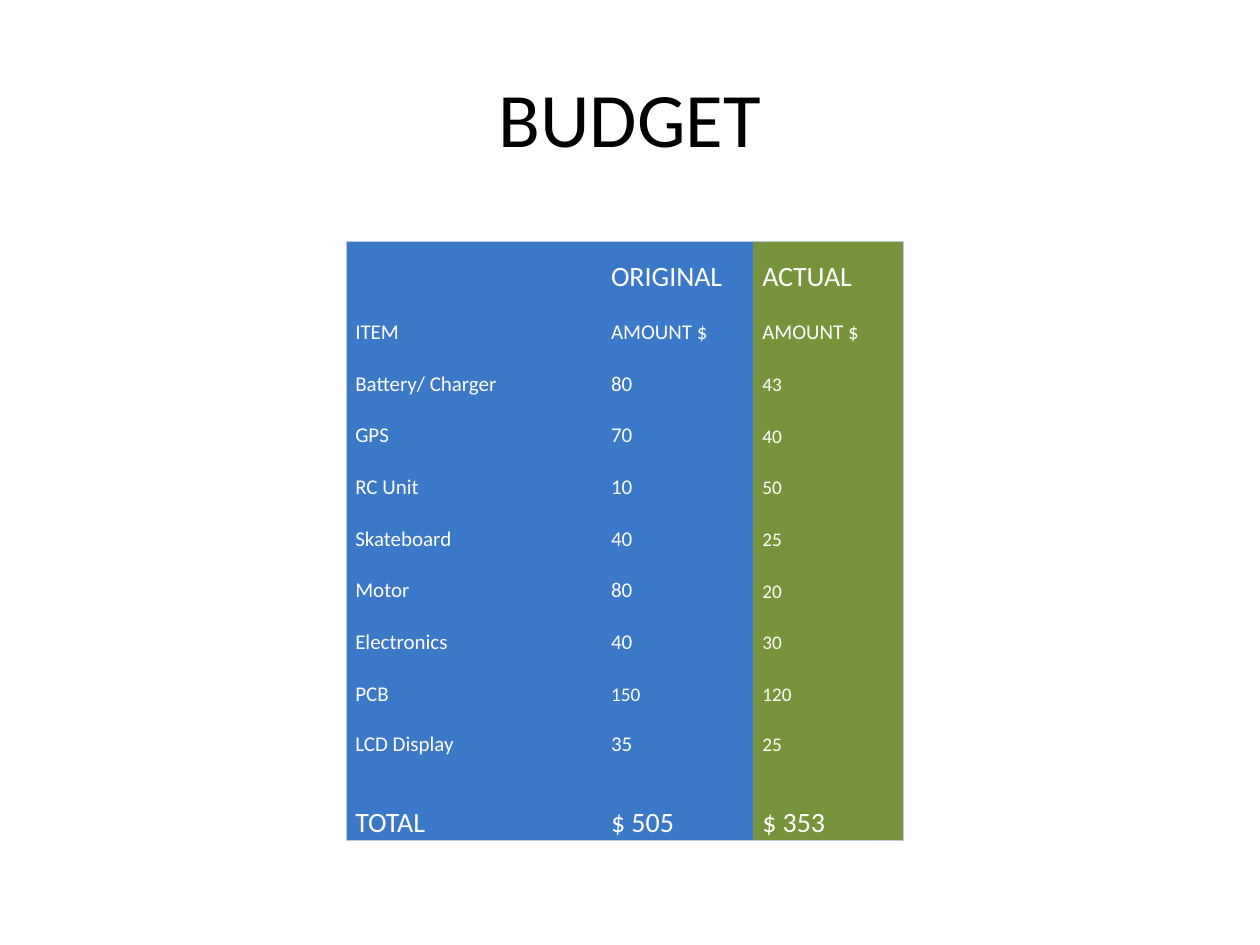
from lxml.etree import SubElement
from pptx import Presentation
from pptx.dml.color import RGBColor
from pptx.enum.text import MSO_ANCHOR as ANCHOR, PP_ALIGN as ALIGN
from pptx.oxml.ns import qn
from pptx.util import Inches, Pt

BLUE, GREEN, EDGE, WHITE, BLACK = "3C78C8", "77933C", "BDC8DD", "FFFFFF", "000000"
NO_STYLE = "{2D5ABB26-0587-4C30-8999-92F81FD0307C}"
COLUMNS = [2.03, 1.2, 1.19]
ROWS = [0.41] * 9 + [0.4, 0.66]
BUDGET = [
    ("", "ORIGINAL", "ACTUAL"),
    ("ITEM", "AMOUNT $", "AMOUNT $"),
    ("Battery/ Charger", "80", "43"),
    ("GPS", "70", "40"),
    ("RC Unit", "10", "50"),
    ("Skateboard", "40", "25"),
    ("Motor", "80", "20"),
    ("Electronics", "40", "30"),
    ("PCB", "150", "120"),
    ("LCD Display", "35", "25"),
    ("TOTAL", "$ 505", "$ 353"),
]


def rgb(value):
    return RGBColor.from_string(value)


def set_text(tf, text, size, color, align, spacing=1.0):
    p = tf.paragraphs[0]
    p.alignment, p.line_spacing = align, spacing
    r = p.add_run()
    r.text = text
    for name, value in {"name": "Calibri", "size": Pt(size)}.items():
        setattr(r.font, name, value)
    r.font.color.rgb = rgb(color)


def add_title(slide, box, text):
    tf = slide.shapes.add_textbox(*map(Inches, box)).text_frame
    tf.word_wrap, tf.vertical_anchor = True, ANCHOR.MIDDLE
    set_text(tf, text, 44, BLACK, ALIGN.CENTER)


def add_border(cell, side):
    ln = SubElement(cell._tc.get_or_add_tcPr(), qn(f"a:ln{side}"), w=str(Pt(0.75)))
    fill = SubElement(ln, qn("a:solidFill"))
    SubElement(fill, qn("a:srgbClr"), val=EDGE)


def text_size(row, col, text):
    if row in (0, len(ROWS) - 1):
        return 16
    is_small = row > 1 and (col == 2 or text == "150")
    return 11 if is_small else 12


def fill_cell(cell, row, col, text):
    last_row, last_col = len(ROWS) - 1, len(COLUMNS) - 1
    outer = {"L": col == 0, "R": col == last_col, "T": row == 0, "B": row == last_row}
    for side, is_outer in outer.items():
        if is_outer:
            add_border(cell, side)
    cell.fill.solid()
    cell.fill.fore_color.rgb = rgb(GREEN if col == last_col else BLUE)
    layout = {"margin_left": Inches(0.07), "margin_right": Inches(0.07),
              "margin_top": 0, "margin_bottom": 0, "vertical_anchor": ANCHOR.BOTTOM}
    for name, value in layout.items():
        setattr(cell, name, value)
    if text:
        align = ALIGN.LEFT if text in ("150", "120") else ALIGN.JUSTIFY
        set_text(cell.text_frame, text, text_size(row, col, text), WHITE, align, 1.15)


def add_budget_table(slide, left, top):
    box = map(Inches, (left, top, sum(COLUMNS), sum(ROWS)))
    table = slide.shapes.add_table(len(ROWS), len(COLUMNS), *box).table
    table.first_row = table.horz_banding = False
    table._tbl.tblPr.find(qn("a:tableStyleId")).text = NO_STYLE
    for column, width in zip(table.columns, COLUMNS):
        column.width = Inches(width)
    for row, (height, texts) in enumerate(zip(ROWS, BUDGET)):
        table.rows[row].height = Inches(height)
        for col, text in enumerate(texts):
            fill_cell(table.cell(row, col), row, col, text)


def main():
    prs = Presentation()
    prs.slide_width, prs.slide_height = Inches(10), Inches(7.5)
    slide = prs.slides.add_slide(prs.slide_layouts[6])
    add_title(slide, (0.5, 0.3, 9, 1.25), "BUDGET")
    add_budget_table(slide, 2.75, 1.92)
    prs.save("out.pptx")


if __name__ == "__main__":
    main()
